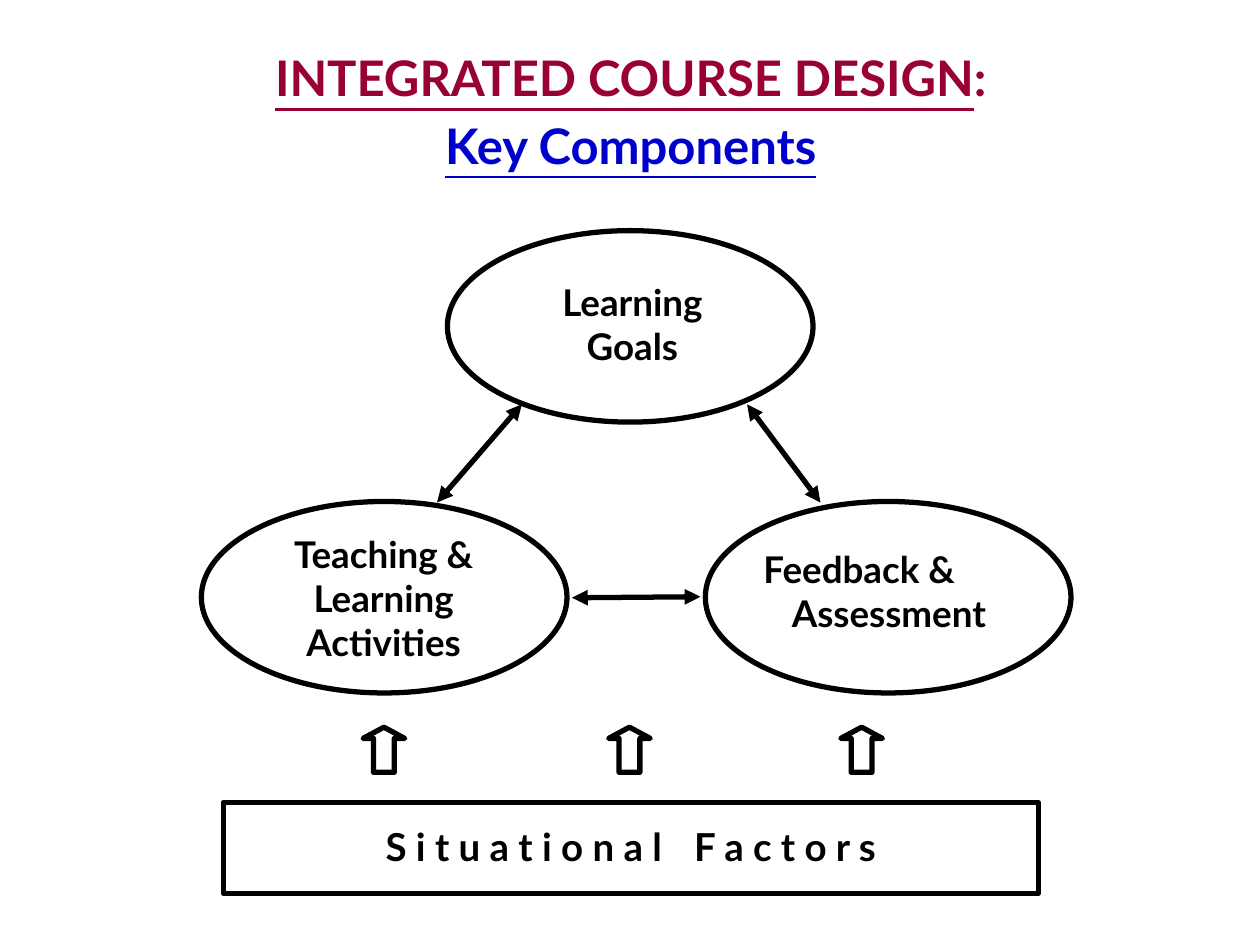
import pptx
import pptx.dml.color
import pptx.enum.shapes
import pptx.enum.text
import pptx.oxml
import pptx.util
import lxml.etree

Cm = pptx.util.Cm
Pt = pptx.util.Pt
RGB = pptx.dml.color.RGBColor
MSO = pptx.enum.shapes.MSO_SHAPE
ALIGN = pptx.enum.text.PP_ALIGN
A = "{http://schemas.openxmlformats.org/drawingml/2006/main}"

THEME = {
    "font": "Lato",
    "ink": RGB(0x00, 0x00, 0x00),
    "paper": RGB(0xFF, 0xFF, 0xFF),
    "heading": RGB(0x99, 0x00, 0x33),
    "subheading": RGB(0x00, 0x00, 0xCC),
    "title_size": Pt(28),
    "label_size": Pt(21),
    "base_size": Pt(22),
    "line": Pt(3),
}


def add_text(p, text, size, color="ink", underline=False):
    r = p.add_run()
    r.text = text
    fmt = {"name": THEME["font"], "size": THEME[size], "bold": True, "underline": underline}
    for name, value in fmt.items():
        setattr(r.font, name, value)
    r.font.color.rgb = THEME[color]
    return r


def add_outline(kind, x, y, w, h, filled=True):
    sp = s.shapes.add_shape(kind, Cm(x), Cm(y), Cm(w), Cm(h))
    sp.shadow.inherit = False
    if filled:
        sp.fill.solid()
        sp.fill.fore_color.rgb = THEME["paper"]
    else:
        sp.fill.background()
    sp.line.color.rgb = THEME["ink"]
    sp.line.width = THEME["line"]
    return sp


prs = pptx.Presentation()
prs.slide_width, prs.slide_height = Cm(25.4), Cm(19.05)
s = prs.slides.add_slide(prs.slide_layouts[6])

sp = add_outline(MSO.RECTANGLE, 4.5, 16.18, 16.43, 1.83, filled=False)
tf = sp.text_frame
tf.vertical_anchor = pptx.enum.text.MSO_ANCHOR.TOP
p = tf.paragraphs[0]
base_format = {"alignment": ALIGN.CENTER, "line_spacing": 1.3, "space_before": Pt(3)}
for name, value in base_format.items():
    setattr(p, name, value)
add_text(p, "S i t u a t i o n a l", "base_size")
gap = add_text(p, " ", "base_size")
gap.font._element.set("spc", "1300")
add_text(p, "F a c t o r s", "base_size")

for x in (7.32, 12.27, 16.95):
    sp = add_outline(MSO.UP_ARROW, x, 14.66, 0.84, 0.91)
    sp.adjustments[0] = 0.5
    sp.adjustments[1] = 0.27

tf = s.shapes.add_textbox(Cm(3.61), Cm(0.84), Cm(18.21), Cm(2.87)).text_frame
tf.word_wrap = True
title_lines = [
    ([("INTEGRATED COURSE DESIGN", True), (":", False)], "heading", 1.0),
    ([("Key Components", True)], "subheading", 0.6),
]
for i, (runs, color, spacing) in enumerate(title_lines):
    p = tf.add_paragraph() if i else tf.paragraphs[0]
    title_format = {
        "alignment": ALIGN.CENTER,
        "line_spacing": spacing,
        "space_before": Pt(14 * i),
        "space_after": Pt(2.8 * (1 - i)),
    }
    for name, value in title_format.items():
        setattr(p, name, value)
    for text, underline in runs:
        add_text(p, text, "title_size", color, underline)

components = [
    ((9.02, 4.65), (10.26, 5.51, 4.98, 1.98), [("Learning Goals", ALIGN.CENTER)]),
    ((14.22, 10.11), (15.14, 10.9, 5.56, 2.24),
     [("Feedback &", ALIGN.LEFT), ("Assessment", ALIGN.CENTER)]),
    ((4.06, 10.11), (4.8, 10.59, 5.87, 2.87),
     [(t, ALIGN.CENTER) for t in ("Teaching &", "Learning", "Activities")]),
]
for corner, box, lines in components:
    add_outline(MSO.OVAL, *corner, 7.37, 3.86)
    tf = s.shapes.add_textbox(*[Cm(v) for v in box]).text_frame
    tf.word_wrap = True
    for i, (text, align) in enumerate(lines):
        p = tf.add_paragraph() if i else tf.paragraphs[0]
        p.alignment = align
        add_text(p, text, "label_size")

links = [
    (8.81, 10.13, 10.52, 8.15),
    (16.54, 10.13, 15.06, 8.15),
    (11.53, 12.05, 14.12, 12.03),
]
for ends in links:
    sp = s.shapes.add_connector(
        pptx.enum.shapes.MSO_CONNECTOR.STRAIGHT, *[Cm(v) for v in ends])
    sp.line.color.rgb = THEME["ink"]
    sp.line.width = THEME["line"]
    ln = sp.line._get_or_add_ln()
    for tag in ("headEnd", "tailEnd"):
        lxml.etree.SubElement(ln, A + tag, type="triangle")
    lxml.etree.SubElement(sp._element.spPr, A + "effectLst")

prs.save("out.pptx")
